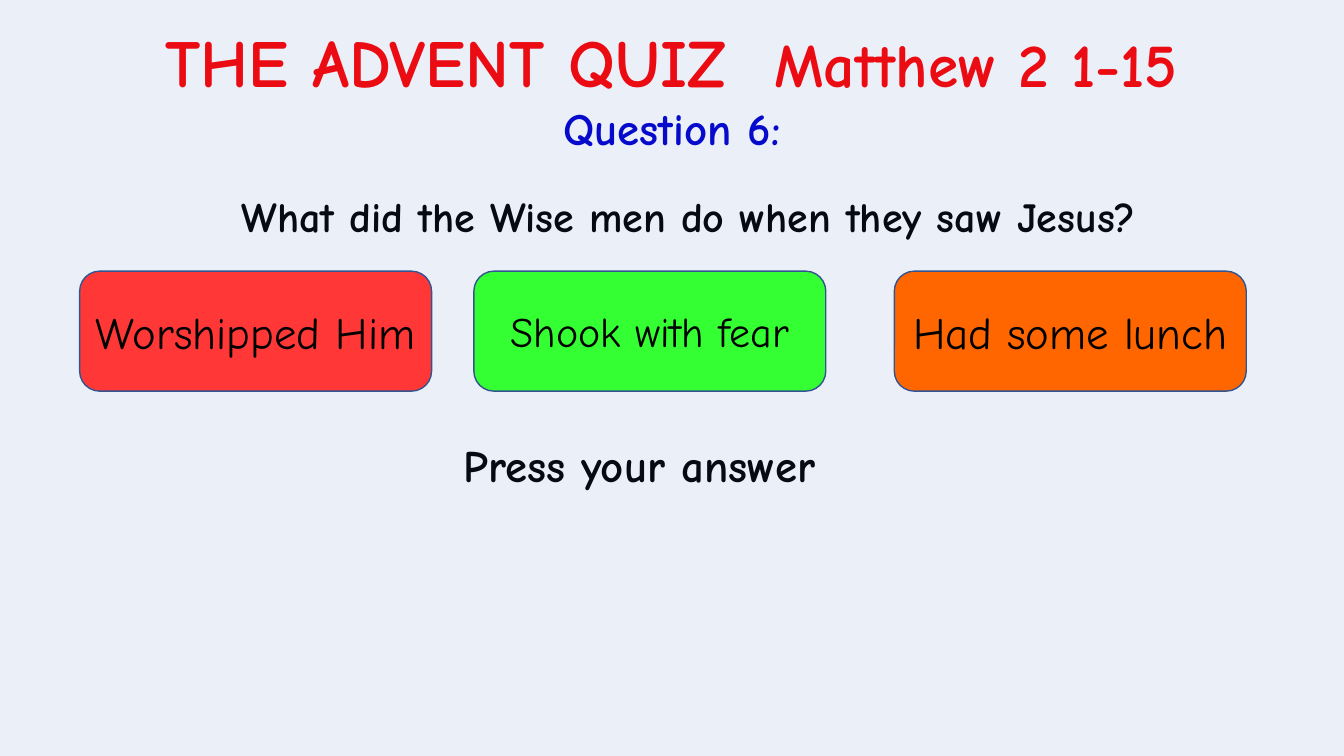
import pptx
import pptx.util
import pptx.dml.color
import pptx.enum.shapes
import pptx.enum.text
import pptx.oxml

Inches, Pt = pptx.util.Inches, pptx.util.Pt
ALIGN = pptx.enum.text.PP_ALIGN
SHAPES = pptx.enum.shapes.MSO_SHAPE
FONT = "Comic Neue"


def rgb(value):
    return pptx.dml.color.RGBColor.from_string(value)


def add_run(p, text, size, color, bold=True):
    r = p.add_run()
    r.text = text
    r.font.name = FONT
    r.font.size = Pt(size)
    r.font.bold = bold
    r.font.color.rgb = rgb(color)


def set_title(s, runs, color):
    title = s.shapes.title
    title.left, title.top = Inches(0.37), Inches(0.15)
    title.width, title.height = Inches(12.58), Inches(0.91)
    tf = title.text_frame
    tf.auto_size = pptx.enum.text.MSO_AUTO_SIZE.NONE
    p = tf.paragraphs[0]
    p.alignment = ALIGN.CENTER
    for text, size in runs:
        add_run(p, text, size, color)


def add_text(s, box, text, size, color="000000", align=ALIGN.CENTER,
             line_spacing=1.0, before=0):
    tf = s.shapes.add_textbox(*map(Inches, box)).text_frame
    tf.word_wrap = True
    p = tf.paragraphs[0]
    p.alignment = align
    p.line_spacing = line_spacing
    p.space_before = Pt(before)
    add_run(p, text, size, color)


def add_panel(s, kind, box, fill):
    sp = s.shapes.add_shape(kind, *map(Inches, box))
    sp.shadow.inherit = False
    sp.fill.solid()
    sp.fill.fore_color.rgb = rgb(fill)
    return sp


def add_tint(s, fill, percent):
    """Cover the whole slide with a transparent colour."""
    sp = add_panel(s, SHAPES.RECTANGLE, (0, 0, 13.33, 7.5), fill)
    sp.line.fill.background()
    color = sp.fill._xPr.find(".//" + pptx.oxml.ns.qn("a:srgbClr"))
    alpha = pptx.oxml.xmlchemy.OxmlElement("a:alpha")
    alpha.set("val", str(percent * 1000))
    color.append(alpha)


def add_answer(s, left, text, size, fill):
    sp = add_panel(s, SHAPES.ROUNDED_RECTANGLE, (left, 2.69, 3.49, 1.19), fill)
    sp.line.color.rgb = rgb("325491")
    sp.line.width = Pt(1)
    tf = sp.text_frame
    tf.word_wrap = True
    tf.vertical_anchor = pptx.enum.text.MSO_ANCHOR.MIDDLE
    p = tf.paragraphs[0]
    p.alignment = ALIGN.CENTER
    add_run(p, text, size, "000000", bold=False)


def main():
    prs = pptx.Presentation()
    prs.slide_width, prs.slide_height = Inches(13.33), Inches(7.5)
    s = prs.slides.add_slide(prs.slide_layouts[5])

    set_title(s, [("THE ADVENT QUIZ  ", 48), ("Matthew 2 1-15", 44)], "FF0000")
    add_text(s, (0.65, 1.79, 12.37, 1.19),
             "What did the Wise men do when they saw Jesus?", 30,
             line_spacing=Pt(40), before=10)
    add_text(s, (4.5, 4.35, 6.73, 0.72), "Press your answer", 32,
             align=ALIGN.LEFT, line_spacing=0.9, before=7.5)
    add_text(s, (4.46, 0.95, 4.41, 0.64), "Question 6:", 32, "0000CC")
    add_tint(s, "4472C4", 10)

    answers = [
        (0.79, "Worshipped Him", 32, "FF3737"),
        (4.7, "Shook with fear", 30, "33FF33"),
        (8.87, "Had some lunch", 32, "FF6600"),
    ]
    for answer in answers:
        add_answer(s, *answer)

    prs.save("out.pptx")


if __name__ == "__main__":
    main()
